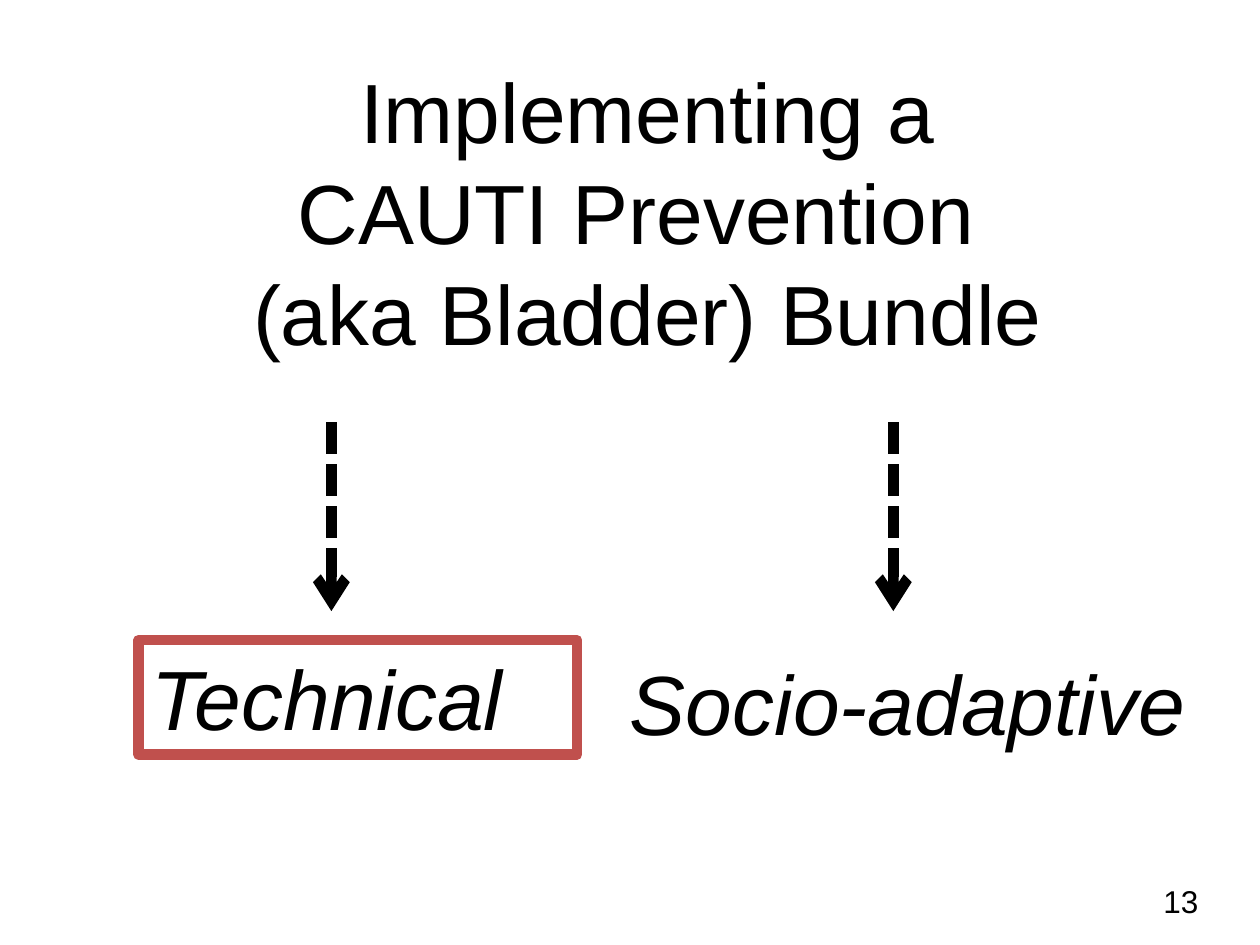
"""Build the CAUTI prevention bundle slide with its two components."""
from lxml import etree
from pptx import Presentation
from pptx.dml.color import RGBColor
from pptx.enum.dml import MSO_LINE
from pptx.enum.shapes import MSO_CONNECTOR, MSO_SHAPE
from pptx.enum.text import MSO_ANCHOR, MSO_AUTO_SIZE, PP_ALIGN
from pptx.oxml.ns import qn
from pptx.util import Inches, Pt

COLORS = {"text": "000000", "highlight": "C0504D"}


def write(shape, text, size, alignment, anchor, italic=None):
    frame = shape.text_frame
    frame.text = text
    frame.word_wrap = True
    frame.auto_size = MSO_AUTO_SIZE.NONE
    frame.vertical_anchor = anchor
    for paragraph in frame.paragraphs:
        paragraph.alignment = alignment
        for run in paragraph.runs:
            run.font.name = "Arial"
            run.font.size = Pt(size)
            run.font.italic = italic
            run.font.color.rgb = RGBColor.from_string(COLORS["text"])


presentation = Presentation()
presentation.slide_width = Inches(10)
presentation.slide_height = Inches(7.5)
slide = presentation.slides.add_slide(presentation.slide_layouts[5])

title = slide.shapes.title
title.left, title.top = Inches(0.28), Inches(1.05)
title.width, title.height = Inches(9.72), Inches(1.25)
write(title, "Implementing a\vCAUTI Prevention \n(aka Bladder) Bundle", 48,
      PP_ALIGN.CENTER, MSO_ANCHOR.MIDDLE)

technical = slide.shapes.add_shape(
    MSO_SHAPE.RECTANGLE, Inches(1.1), Inches(5.08), Inches(3.48), Inches(0.91))
technical.shadow.inherit = False
technical.fill.background()
technical.line.color.rgb = RGBColor.from_string(COLORS["highlight"])
technical.line.width = Pt(6)
write(technical, "Technical", 48, PP_ALIGN.LEFT, MSO_ANCHOR.TOP, True)

adaptive = slide.shapes.add_textbox(
    Inches(4.9), Inches(5.06), Inches(4.68), Inches(0.96))
write(adaptive, "Socio-adaptive", 48, PP_ALIGN.LEFT, MSO_ANCHOR.TOP, True)
adaptive.text_frame.paragraphs[0].line_spacing = Pt(62)

for x in (2.63, 7.09):
    arrow = slide.shapes.add_connector(
        MSO_CONNECTOR.STRAIGHT, Inches(x), Inches(3.35), Inches(x), Inches(4.85))
    arrow.line.color.rgb = RGBColor.from_string(COLORS["text"])
    arrow.line.width = Pt(6)
    arrow.line.dash_style = MSO_LINE.SQUARE_DOT
    etree.SubElement(arrow.line._get_or_add_ln(), qn("a:tailEnd"), type="arrow")
    etree.SubElement(arrow._element.spPr, qn("a:effectLst"))

page_number = slide.shapes.add_textbox(
    Inches(6.78), Inches(6.8), Inches(2.83), Inches(0.7))
write(page_number, "13", 18, PP_ALIGN.RIGHT, MSO_ANCHOR.MIDDLE)

presentation.save("out.pptx")
